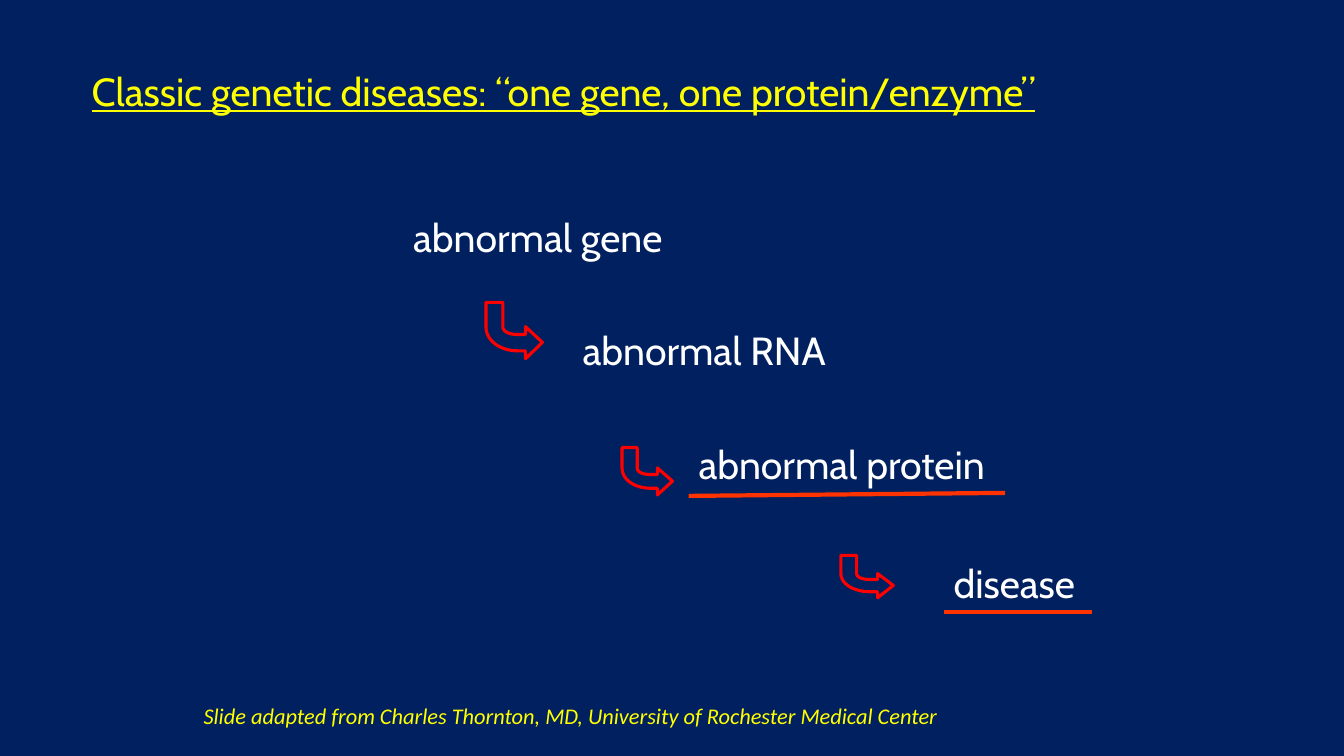
"""Build a slide tracing an abnormal gene to disease."""
from lxml import etree
from pptx import Presentation
from pptx.dml.color import RGBColor
from pptx.enum.shapes import MSO_CONNECTOR
from pptx.enum.text import MSO_AUTO_SIZE
from pptx.oxml.ns import qn
from pptx.util import Inches, Pt

NAVY = RGBColor(0x00, 0x20, 0x60)
WHITE = RGBColor(0xFF, 0xFF, 0xFF)
YELLOW = RGBColor(0xFF, 0xFF, 0x00)
RED = RGBColor(0xFF, 0x00, 0x00)
ORANGE = RGBColor(0xFF, 0x33, 0x00)
STRAIGHT = MSO_CONNECTOR.STRAIGHT
GROW = MSO_AUTO_SIZE.SHAPE_TO_FIT_TEXT

STEPS = [
    ("abnormal gene", 4, 2.07, 2.77),
    ("abnormal RNA", 5.68, 3.19, 2.67),
    ("abnormal protein", 6.83, 4.32, 3.14),
    ("disease", 9.36, 5.5, 1.47),
]
ARROWS = [(4.82, 3, 0.56, 0.56), (6.17, 4.44, 0.5, 0.47), (8.34, 5.51, 0.52, 0.42)]
RULES = [(6.83, 4.92, 9.97, 4.89), (9.36, 6.07, 10.83, 6.07)]


def add_text(slide, text, left, top, width, height=0.57, size=28,
             font="Cabin", color=WHITE, wrap=False):
    """Add a one-line text box and return its font."""
    box = slide.shapes.add_textbox(*map(Inches, (left, top, width, height)))
    frame = box.text_frame
    frame.word_wrap = wrap
    frame.auto_size = GROW
    para = frame.paragraphs[0]
    para.text = text
    para.font.size = Pt(size)
    para.font.name = font
    para.font.color.rgb = color
    return para.font


def curve(*ends, steps=12):
    """Return points along a cubic curve, without its start."""
    points = []
    for step in range(1, steps + 1):
        t = step / steps
        parts = ((1 - t) ** 3, 3 * t * (1 - t) ** 2, 3 * t * t * (1 - t), t ** 3)
        points.append(tuple(sum(p * end[axis] for p, end in zip(parts, ends))
                            for axis in (0, 1)))
    return points


def add_arrow(slide, left, top, width, height):
    """Add a hollow bent arrow that fills the given box."""
    points = [(1, 0.71), (0.7, 1), (0.7, 0.86), (0.57, 0.86)]
    points += curve((0.57, 0.86), (0.25, 0.86), (0, 0.68), (0, 0.43))
    points += [(0, 0), (0.3, 0), (0.3, 0.43)]
    points += curve((0.3, 0.43), (0.3, 0.52), (0.41, 0.57), (0.57, 0.57))
    points += [(0.7, 0.57), (0.7, 0.43)]
    spots = [(Inches(left + x * width), Inches(top + y * height)) for x, y in points]
    pen = slide.shapes.build_freeform(*spots[0])
    pen.add_line_segments(spots[1:], close=True)
    arrow = pen.convert_to_shape()
    arrow.shadow.inherit = False
    arrow.fill.background()
    arrow.line.color.rgb = RED
    arrow.line.width = Pt(2.25)


def add_rule(slide, *ends):
    """Add an orange line under a step."""
    rule = slide.shapes.add_connector(STRAIGHT, *map(Inches, ends))
    rule.line.color.rgb = ORANGE
    rule.line.width = Pt(3)
    etree.SubElement(rule.element.spPr, qn("a:effectLst"))


def main():
    """Build and save the slide."""
    deck = Presentation()
    deck.slide_width, deck.slide_height = Inches(13.33), Inches(7.5)
    slide = deck.slides.add_slide(deck.slide_layouts[6])
    slide.background.fill.solid()
    slide.background.fill.fore_color.rgb = NAVY

    title = add_text(slide, "Classic genetic diseases: “one gene, one protein/enzyme”",
                     0.81, 0.62, 10.18, color=YELLOW)
    title.underline = True
    for step in STEPS:
        add_text(slide, *step)
    for box in ARROWS:
        add_arrow(slide, *box)
    for ends in RULES:
        add_rule(slide, *ends)
    credit = add_text(
        slide,
        "Slide adapted from Charles Thornton, MD, University of Rochester Medical Center",
        1.92, 6.92, 9.25, 0.37, 16, "Calibri", YELLOW, True)
    credit.italic = True
    deck.save("out.pptx")


if __name__ == "__main__":
    main()
